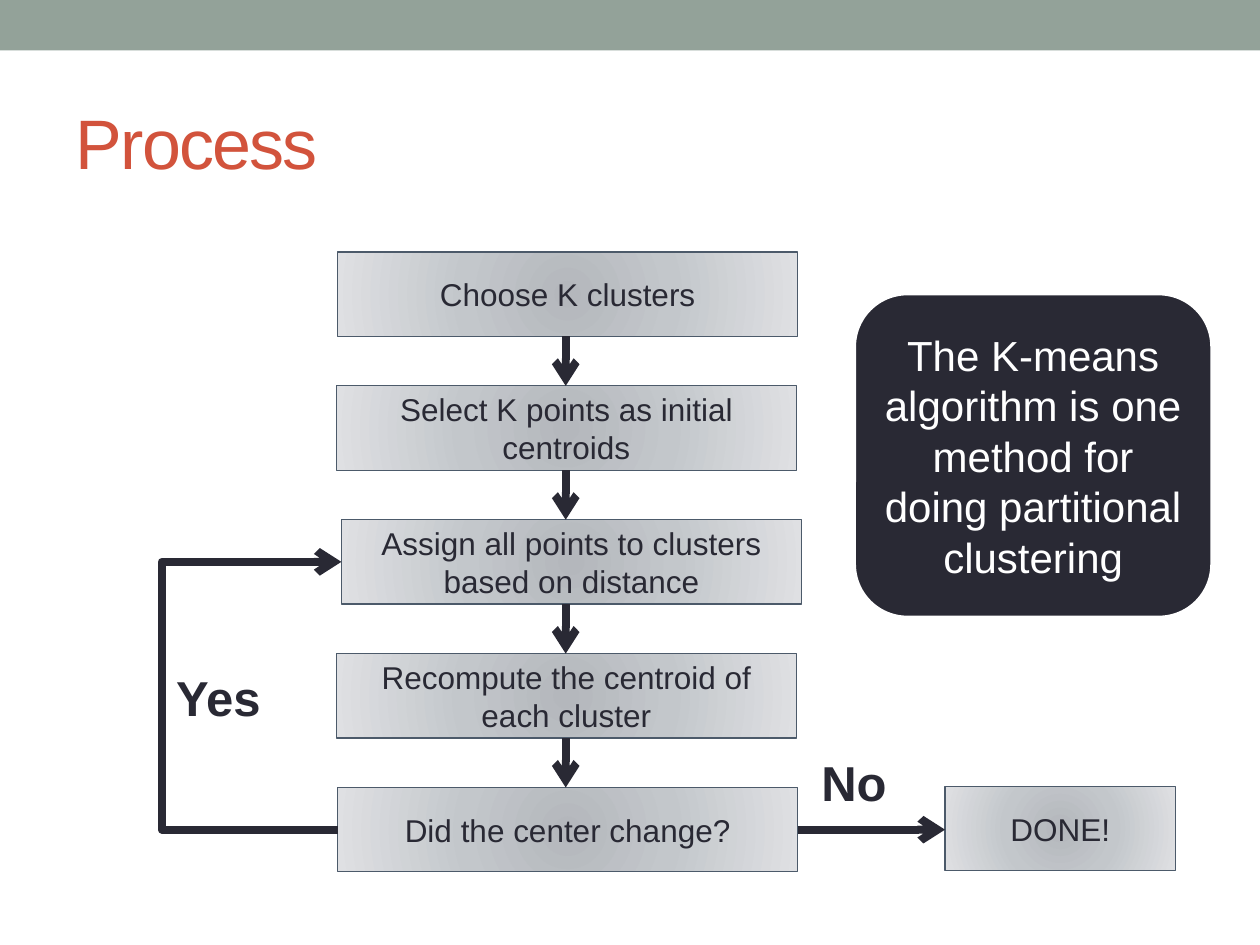
from lxml import etree
from pptx import Presentation
from pptx.dml.color import RGBColor
from pptx.enum.shapes import MSO_CONNECTOR, MSO_SHAPE
from pptx.enum.text import MSO_ANCHOR, MSO_AUTO_SIZE, PP_ALIGN
from pptx.oxml.ns import qn
from pptx.util import Inches, Pt

RECTANGLE, ROUNDED = MSO_SHAPE.RECTANGLE, MSO_SHAPE.ROUNDED_RECTANGLE
STRAIGHT, ELBOW = MSO_CONNECTOR.STRAIGHT, MSO_CONNECTOR.ELBOW
LEFT, CENTER = PP_ALIGN.LEFT, PP_ALIGN.CENTER
MIDDLE, TOP = MSO_ANCHOR.MIDDLE, MSO_ANCHOR.TOP

DARK, OUTLINE, WHITE = "292934", "4C5A6A", "FFFFFF"
BAND, ACCENT = "93A299", "D2533C"
GRADIENT = [(0, "B4B7BC"), (45, "C3C7CB"), (100, "DFE0E3")]

STEPS = [
    (2.68, "Choose K clusters"),
    (2.67, "Select K points as initial centroids"),
    (2.71, "Assign all points to clusters based on distance"),
    (2.67, "Recompute the centroid of each cluster"),
    (2.68, "Did the center change?"),
]
LABELS = [("Yes", (1.3, 5.25, 0.88, 0.57)), ("No", (6.42, 5.92, 0.73, 0.57))]
DONE = ("DONE!", (7.5, 6.24, 1.83, 0.67))
NOTE = (
    "The K-means algorithm is one method for doing partitional clustering",
    (6.77, 2.32, 2.86, 2.59),
)

STEP_TOP, STEP_PITCH, STEP_WIDTH, STEP_HEIGHT = 2, 1.0625, 3.65, 0.67
ARROW_X, LOOP_X = 4.49, 1.28
LOOP_TARGET = 2

STEP_FONT = {"size": Pt(18), "name": "Arial"}
LABEL_FONT = {"size": Pt(28), "name": "Arial", "bold": True}
NOTE_FONT = {"size": Pt(24), "name": "Arial"}
TITLE_FONT = {"size": Pt(40), "name": "Arial"}


def rgb(color):
    return RGBColor.from_string(color)


def inches(values):
    return [Inches(value) for value in values]


def write(shape, text, font, color, align=CENTER, anchor=MIDDLE):
    frame = shape.text_frame
    frame.vertical_anchor = anchor
    para = frame.paragraphs[0]
    para.alignment = align
    span = para.add_run()
    span.text = text
    span.font.color.rgb = rgb(color)
    for name, value in font.items():
        setattr(span.font, name, value)
    return span


def add_block(page, kind, place, fill, line=None, width=0.75):
    block = page.shapes.add_shape(kind, *inches(place))
    block.shadow.inherit = False
    block.fill.solid()
    block.fill.fore_color.rgb = rgb(fill)
    if line:
        block.line.color.rgb = rgb(line)
        block.line.width = Pt(width)
    else:
        block.line.fill.background()
    return block


def fill_radial(block):
    block.fill.gradient()
    gradient = block._element.spPr.find(qn("a:gradFill"))
    for child in list(gradient):
        gradient.remove(child)
    stops = etree.SubElement(gradient, qn("a:gsLst"))
    for position, color in GRADIENT:
        stop = etree.SubElement(stops, qn("a:gs"), pos=str(position * 1000))
        etree.SubElement(stop, qn("a:srgbClr"), val=color)
    shade = etree.SubElement(gradient, qn("a:path"), {"path": "circle"})
    sides = {side: "100000" for side in "ltrb"}
    etree.SubElement(shade, qn("a:fillToRect"), sides)


def add_step(page, text, place):
    step = add_block(page, RECTANGLE, place, WHITE, OUTLINE)
    fill_radial(step)
    write(step, text, STEP_FONT, DARK)


def add_arrow(page, start, end, kind=STRAIGHT):
    arrow = page.shapes.add_connector(kind, *inches(start + end))
    arrow.line.color.rgb = rgb(DARK)
    arrow.line.width = Pt(4.5)
    properties = arrow._element.spPr
    etree.SubElement(properties.find(qn("a:ln")), qn("a:tailEnd"), type="arrow")
    etree.SubElement(properties, qn("a:effectLst"))
    return arrow


def add_loop(page, start, end, bend_x):
    loop = add_arrow(page, start, end, ELBOW)
    ratio = (bend_x - start[0]) / (end[0] - start[0])
    guides = loop._element.spPr.find(qn("a:prstGeom")).find(qn("a:avLst"))
    formula = f"val {round(ratio * 100000)}"
    etree.SubElement(guides, qn("a:gd"), name="adj1", fmla=formula)


def add_label(page, text, place):
    label = page.shapes.add_textbox(*inches(place))
    label.text_frame.word_wrap = False
    label.text_frame.auto_size = MSO_AUTO_SIZE.SHAPE_TO_FIT_TEXT
    write(label, text, LABEL_FONT, DARK, LEFT, TOP)


def add_title(page, text, place):
    title = page.shapes.title
    title.left, title.top, title.width, title.height = inches(place)
    span = write(title, text, TITLE_FONT, ACCENT, LEFT)
    span.font._element.set("spc", "-100")


def main():
    deck = Presentation()
    deck.slide_width, deck.slide_height = inches((10, 7.5))
    page = deck.slides.add_slide(deck.slide_layouts[5])

    add_block(page, RECTANGLE, (0, 0, 10, 0.4), BAND)
    add_title(page, "Process", (0.5, 0.58, 9, 1.08))

    tops = [STEP_TOP + row * STEP_PITCH for row in range(len(STEPS))]
    for top, (left, text) in zip(tops, STEPS):
        add_step(page, text, (left, top, STEP_WIDTH, STEP_HEIGHT))
    for top, below in zip(tops, tops[1:]):
        add_arrow(page, (ARROW_X, top + STEP_HEIGHT), (ARROW_X, below))

    add_step(page, *DONE)
    last_left = STEPS[-1][0]
    last_middle = tops[-1] + STEP_HEIGHT / 2
    target = (STEPS[LOOP_TARGET][0], tops[LOOP_TARGET] + STEP_HEIGHT / 2)
    add_loop(page, (last_left, last_middle), target, LOOP_X)
    add_arrow(page, (last_left + STEP_WIDTH, last_middle), (DONE[1][0], last_middle))

    for text, place in LABELS:
        add_label(page, text, place)

    note_text, note_place = NOTE
    note = add_block(page, ROUNDED, note_place, DARK, WHITE, 3.5)
    write(note, note_text, NOTE_FONT, WHITE)

    deck.save("out.pptx")


if __name__ == "__main__":
    main()
